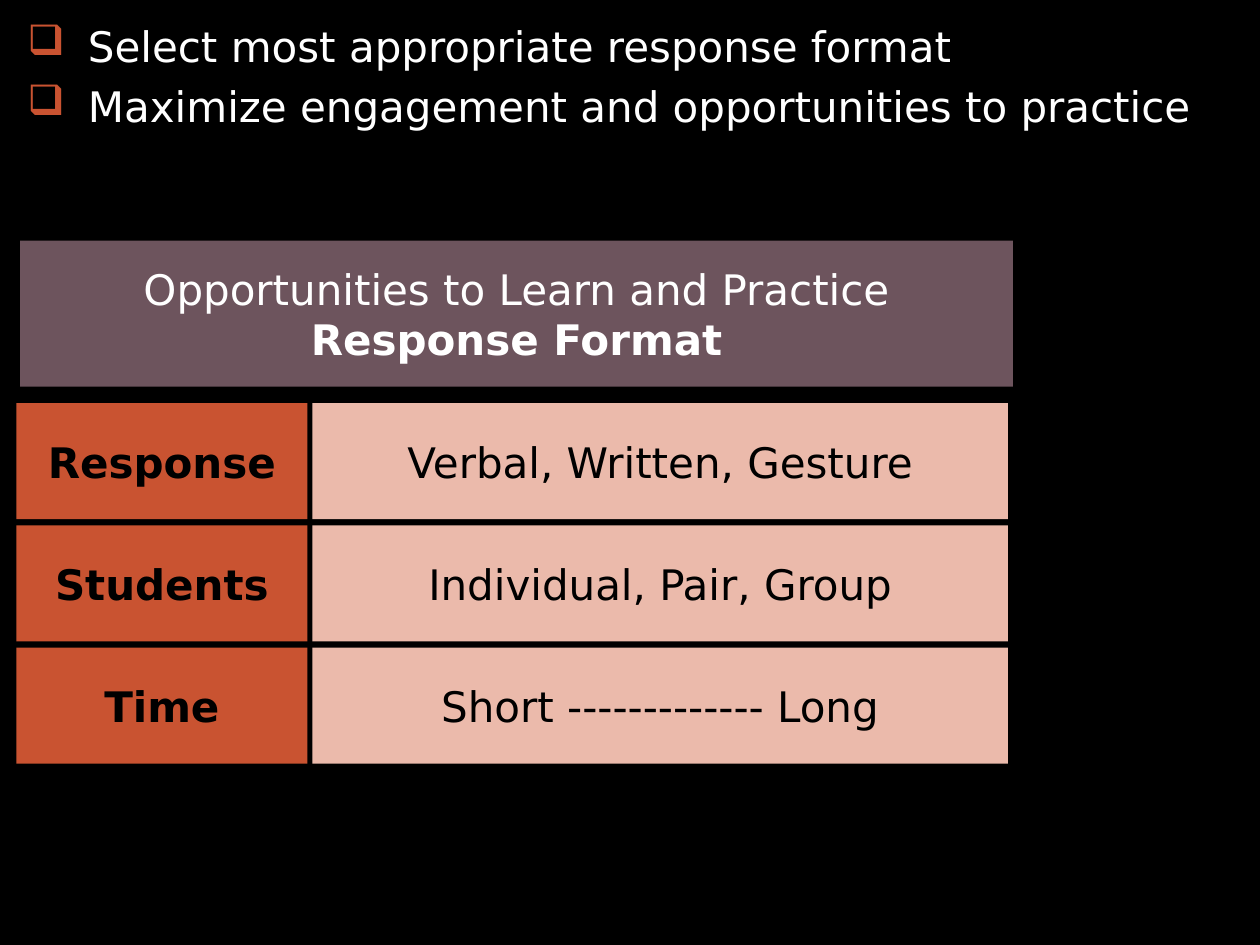
from lxml import etree
from pptx import Presentation
from pptx.dml.color import RGBColor
from pptx.enum.shapes import MSO_SHAPE
from pptx.enum.text import MSO_ANCHOR, PP_ALIGN
from pptx.oxml.ns import qn
from pptx.util import Inches, Pt

RECT = MSO_SHAPE.RECTANGLE
MIDDLE = MSO_ANCHOR.MIDDLE
CENTER = PP_ALIGN.CENTER
FONT = "DejaVu Sans"
SIZE = 24
COLORS = {
    "black": "000000",
    "white": "FFFFFF",
    "plum": "6D545D",
    "rust": "C95331",
    "peach": "EBBAAB",
}
POINTS = [
    "Select most appropriate response format",
    "Maximize engagement and opportunities to practice",
]
ROWS = [
    ("Response", "Verbal, Written, Gesture"),
    ("Students", "Individual, Pair, Group"),
    ("Time", "Short ------------- Long"),
]
ROW_TOP, ROW_STEP, ROW_HIGH = 3.2, 0.97, 0.92
INDENT = 0.48


def color(name):
    return RGBColor.from_string(COLORS[name])


def add_run(para, text, ink, bold=False):
    run = para.add_run()
    run.text = text
    run.font.name = FONT
    run.font.size = Pt(SIZE)
    run.font.bold = bold
    run.font.color.rgb = color(ink)


def next_para(frame, index):
    return frame.add_paragraph() if index else frame.paragraphs[0]


def add_box(slide, place, fill, ink, lines):
    """Draw a filled box with centred (text, bold) lines."""
    box = slide.shapes.add_shape(RECT, *map(Inches, place))
    box.shadow.inherit = False
    box.fill.solid()
    box.fill.fore_color.rgb = color(fill)
    box.line.fill.background()
    frame = box.text_frame
    frame.word_wrap = True
    frame.vertical_anchor = MIDDLE
    for index, (text, bold) in enumerate(lines):
        para = next_para(frame, index)
        para.alignment = CENTER
        add_run(para, text, ink, bold)


def set_bullet(para):
    props = para._p.get_or_add_pPr()
    props.set("marL", str(Inches(INDENT)))
    props.set("indent", str(-Inches(INDENT)))
    tint = etree.SubElement(props, qn("a:buClr"))
    etree.SubElement(tint, qn("a:srgbClr"), val=COLORS["rust"])
    etree.SubElement(props, qn("a:buChar"), char="❑")


def add_list(slide, place, items):
    frame = slide.shapes.add_textbox(*map(Inches, place)).text_frame
    frame.word_wrap = True
    for index, text in enumerate(items):
        para = next_para(frame, index)
        set_bullet(para)
        para.line_spacing = 1.2
        add_run(para, text, "white")


def main():
    deck = Presentation()
    deck.slide_width, deck.slide_height = Inches(10), Inches(7.5)
    slide = deck.slides.add_slide(deck.slide_layouts[6])
    slide.background.fill.solid()
    slide.background.fill.fore_color.rgb = color("black")

    # Bullet points
    add_list(slide, (0.12, 0.03, 9.5, 1.38), POINTS)

    # Heading of the grid
    add_box(slide, (0.16, 1.91, 7.88, 1.16), "plum", "white",
            [("Opportunities to Learn and Practice", False),
             ("Response Format", True)])

    # Rows: label and choices
    for index, (label, choice) in enumerate(ROWS):
        top = ROW_TOP + index * ROW_STEP
        add_box(slide, (0.13, top, 2.31, ROW_HIGH), "rust", "black",
                [(label, True)])
        add_box(slide, (2.48, top, 5.52, ROW_HIGH), "peach", "black",
                [(choice, False)])

    deck.save("out.pptx")


if __name__ == "__main__":
    main()
